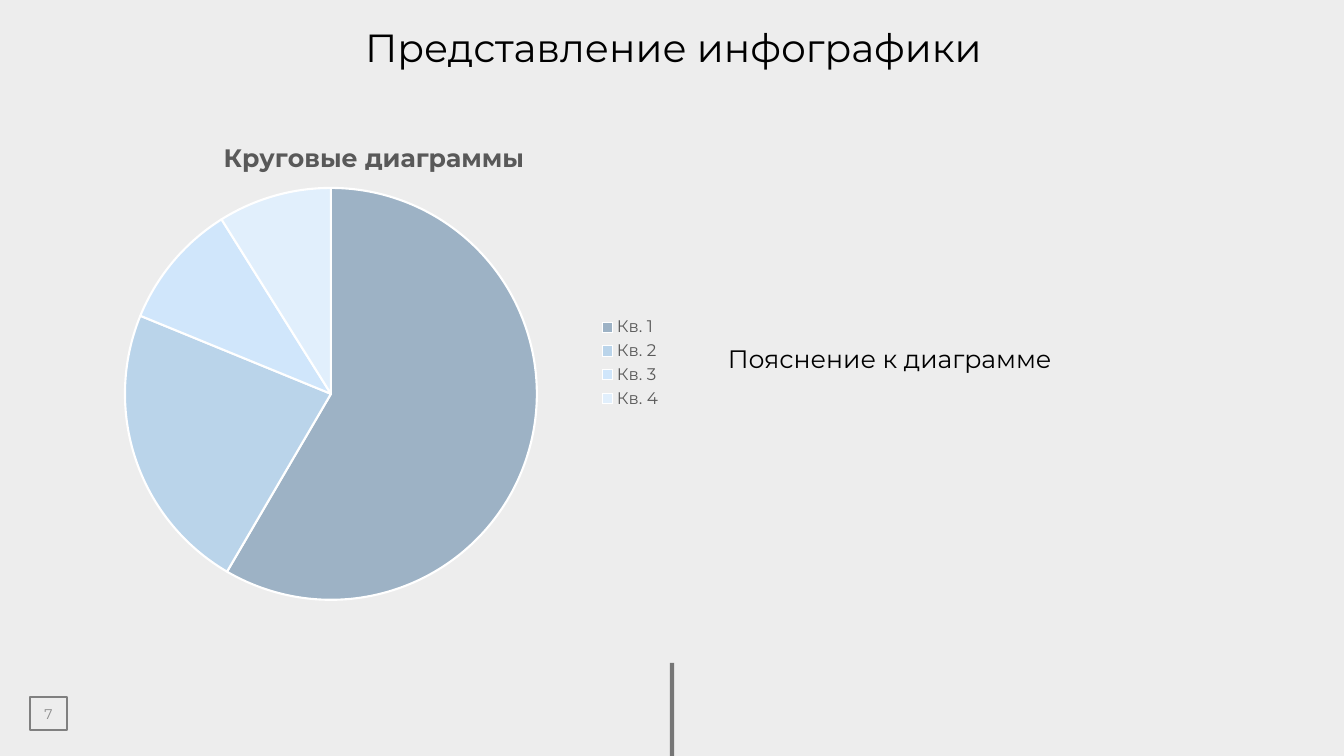
from lxml import etree
from pptx import Presentation
from pptx.chart.data import CategoryChartData
from pptx.dml.color import RGBColor
from pptx.enum.chart import XL_CHART_TYPE, XL_LEGEND_POSITION
from pptx.enum.shapes import MSO_CONNECTOR, MSO_SHAPE
from pptx.enum.text import MSO_ANCHOR, PP_ALIGN
from pptx.oxml.ns import qn
from pptx.util import Pt

PIE = XL_CHART_TYPE.PIE
LEGEND_RIGHT = XL_LEGEND_POSITION.RIGHT
STRAIGHT = MSO_CONNECTOR.STRAIGHT
RECTANGLE = MSO_SHAPE.RECTANGLE
TOP, MIDDLE = MSO_ANCHOR.TOP, MSO_ANCHOR.MIDDLE
LEFT, CENTER = PP_ALIGN.LEFT, PP_ALIGN.CENTER

SLIDE_WIDTH, SLIDE_HEIGHT = 1344, 756
EMU_PER_PX = 914400 / 100.8
FONT = "Montserrat"
COLORS = {
    "background": "EDEDED",
    "text": "000000",
    "chart text": "595959",
    "number": "8C8C8C",
    "number frame": "808080",
    "slice border": "FFFFFF",
}
QUARTERS = {
    "Кв. 1": (59, "9DB2C5"),
    "Кв. 2": (23, "BAD4EA"),
    "Кв. 3": (10, "D0E6FB"),
    "Кв. 4": (9, "E1EFFC"),
}


def px(*lengths):
    return [round(length * EMU_PER_PX) for length in lengths]


def rgb(name):
    return RGBColor.from_string(COLORS[name])


def format_font(font, size, color):
    font.name = FONT
    font.size = Pt(size)
    font.color.rgb = rgb(color)


def write_text(frame, text, size, color="text", align=LEFT, anchor=TOP,
               line_spacing=1.0):
    frame.word_wrap = True
    frame.vertical_anchor = anchor
    paragraph = frame.paragraphs[0]
    paragraph.alignment = align
    paragraph.line_spacing = line_spacing
    paragraph.space_before = Pt(0)
    run = paragraph.add_run()
    run.text = text
    format_font(run.font, size, color)


def add_title(slide, box):
    title = slide.shapes.title
    title.left, title.top, title.width, title.height = px(*box)
    write_text(title.text_frame, "Представление инфографики", 28,
               line_spacing=0.9)


def set_layout(parent, **fractions):
    """Place a chart part by fractions of the chart's width and height."""
    layout = parent.find(qn("c:layout"))
    if layout is None:
        layout = etree.Element(qn("c:layout"))
        parent.insert(0, layout)
    manual = etree.SubElement(layout, qn("c:manualLayout"))
    if "w" in fractions:
        etree.SubElement(manual, qn("c:layoutTarget"), val="inner")
    for axis in "xy":
        etree.SubElement(manual, qn(f"c:{axis}Mode"), val="edge")
    for name, fraction in fractions.items():
        etree.SubElement(manual, qn(f"c:{name}"), val=f"{fraction:.4f}")


def add_pie(slide, box):
    data = CategoryChartData()
    data.categories = list(QUARTERS)
    data.add_series("Series 1", [value for value, _ in QUARTERS.values()])
    chart = slide.shapes.add_chart(PIE, *px(*box), data).chart
    format_font(chart.font, 10, "text")

    chart.has_title = True
    write_text(chart.chart_title.text_frame, "Круговые диаграммы", 18,
               color="chart text", align=CENTER)
    chart.has_legend = True
    chart.legend.position = LEGEND_RIGHT
    chart.legend.include_in_layout = False
    format_font(chart.legend.font, 12, "chart text")

    plot = chart.plots[0]
    plot.vary_by_categories = True
    for index, (_, color) in enumerate(QUARTERS.values()):
        slice_format = plot.series[0].points[index].format
        slice_format.fill.solid()
        slice_format.fill.fore_color.rgb = RGBColor.from_string(color)
        slice_format.line.color.rgb = rgb("slice border")
        slice_format.line.width = Pt(1.5)

    _, _, width, height = box
    diameter = 412
    set_layout(chart.element.find(".//" + qn("c:title")),
               x=154 / width, y=24 / height)
    set_layout(chart.element.find(".//" + qn("c:plotArea")),
               x=60 / width, y=76 / height,
               w=diameter / width, h=diameter / height)


def add_explanation(slide, box):
    text_box = slide.shapes.add_textbox(*px(*box))
    write_text(text_box.text_frame, "Пояснение к диаграмме", 18,
               anchor=MIDDLE, line_spacing=1.4)


def add_footer(slide, box):
    left, top, width, height = box
    middle = left + width // 2
    divider = slide.shapes.add_connector(
        STRAIGHT, *px(middle, top, middle, top + height))
    divider.line.width = Pt(3)
    divider.line.color.rgb = rgb("text")
    color = divider.element.spPr.find(".//" + qn("a:srgbClr"))
    etree.SubElement(color, qn("a:alpha"), val="50000")
    etree.SubElement(divider.element.spPr, qn("a:effectLst"))

    frame = slide.shapes.add_shape(
        RECTANGLE, *px(left + 30, top + 34, 37, 33))
    frame.shadow.inherit = False
    frame.fill.background()
    frame.line.color.rgb = rgb("number frame")
    frame.line.width = Pt(1.5)
    text_frame = frame.text_frame
    text_frame.margin_left = text_frame.margin_right = 0
    write_text(text_frame, "7", 10, color="number", align=CENTER,
               anchor=MIDDLE)


def main():
    presentation = Presentation()
    presentation.slide_width, presentation.slide_height = px(
        SLIDE_WIDTH, SLIDE_HEIGHT)
    slide = presentation.slides.add_slide(presentation.slide_layouts[5])
    slide.background.fill.solid()
    slide.background.fill.fore_color.rgb = rgb("background")

    add_footer(slide, (0, 663, SLIDE_WIDTH, 93))
    add_title(slide, (355, 24, 708, 50))
    add_pie(slide, (65, 112, 607, 502))
    add_explanation(slide, (718, 112, 605, 480))
    presentation.save("out.pptx")


if __name__ == "__main__":
    main()
